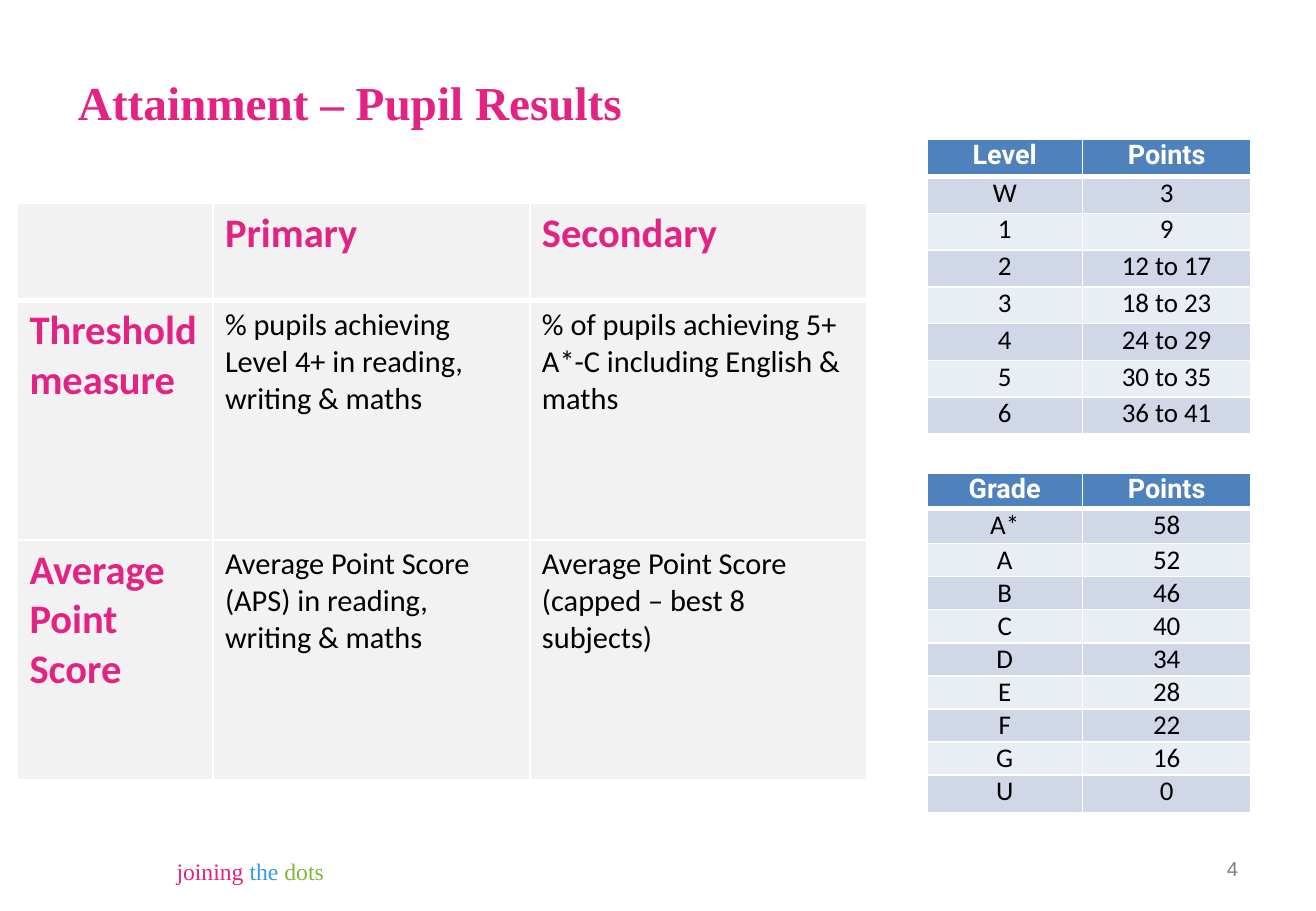
from lxml.etree import SubElement
from pptx import Presentation
from pptx.dml.color import RGBColor as RGB
from pptx.enum.text import MSO_ANCHOR as Anchor, PP_ALIGN as Align
from pptx.oxml.ns import qn
from pptx.util import Pt

TITLE = "Attainment – Pupil Results"
STRAPLINE = [("joining ", "pink"), ("the", "blue"), (" dots", "green")]
PAGE_NUMBER = "4"

MEASURES = [
    ("", "Primary", "Secondary"),
    ("Threshold measure",
     "% pupils achieving Level 4+ in reading, writing & maths",
     "% of pupils achieving 5+ A*-C including English & maths"),
    ("Average Point Score",
     "Average Point Score (APS) in reading, writing & maths",
     "Average Point Score (capped – best 8 subjects)"),
]
LEVELS = [("Level", "Points"), ("W", "3"), ("1", "9"), ("2", "12 to 17"),
          ("3", "18 to 23"), ("4", "24 to 29"), ("5", "30 to 35"), ("6", "36 to 41")]
GRADES = [("Grade", "Points"), ("A*", "58"), ("A", "52"), ("B", "46"), ("C", "40"),
          ("D", "34"), ("E", "28"), ("F", "22"), ("G", "16"), ("U", "0")]

THEME = {
    "colours": {"pink": "E32383", "blue": "339CDF", "green": "7FB731", "grey": "808080",
                "black": "000000", "white": "FFFFFF", "panel": "F2F2F2",
                "header": "4F81BD", "band": "D0D8E8", "pale": "E9EDF4"},
    "title": {"name": "Times New Roman", "size": Pt(28), "bold": True},
    "strapline": {"name": "Times New Roman", "size": Pt(14), "bold": False},
    "number": {"name": "Arial", "size": Pt(12), "bold": False},
    "heading": {"name": "Calibri", "size": Pt(24), "bold": True},
    "measure": {"name": "Calibri", "size": Pt(18), "bold": False},
    "points_header": {"name": "Roboto", "size": Pt(16), "bold": True},
    "points": {"name": "Calibri", "size": Pt(16), "bold": False},
}
RULE, HEADER_RULE = 1, 3
POINTS_LEFT = 549.4
POINTS_COLUMNS = (92.2, 99.8)


def colour(name):
    return RGB.from_string(THEME["colours"][name])


def write(paragraph, text, style, ink):
    run = paragraph.add_run()
    run.text = text
    for attribute, value in THEME[style].items():
        setattr(run.font, attribute, value)
    run.font.color.rgb = colour(ink)


def add_borders(cell, row):
    """White rules all round, heavier between the header and the first row."""
    properties = cell._tc.get_or_add_tcPr()
    weights = {"a:lnL": RULE, "a:lnR": RULE,
               "a:lnT": HEADER_RULE if row == 1 else RULE,
               "a:lnB": HEADER_RULE if row == 0 else RULE}
    for position, (tag, weight) in enumerate(weights.items()):
        line = SubElement(properties, qn(tag), w=str(Pt(weight)))
        fill = SubElement(line, qn("a:solidFill"))
        SubElement(fill, qn("a:srgbClr"), val=THEME["colours"]["white"])
        properties.insert(position, line)


def add_grid(slide, rows, left, top, widths, heights, look):
    """Add a table; look(row, column) gives text style, ink and fill."""
    frame = slide.shapes.add_table(len(rows), len(widths), Pt(left), Pt(top),
                                   Pt(sum(widths)), Pt(sum(heights)))
    table = frame.table
    table.horz_banding = False
    for column, width in zip(table.columns, widths):
        column.width = Pt(width)
    for row, height in zip(table.rows, heights):
        row.height = Pt(height)
    for r, texts in enumerate(rows):
        for c, text in enumerate(texts):
            cell = table.cell(r, c)
            style, ink, fill = look(r, c)
            cell.fill.solid()
            cell.fill.fore_color.rgb = colour(fill)
            add_borders(cell, r)
            if text:
                write(cell.text_frame.paragraphs[0], text, style, ink)
    return table


def measure_look(row, column):
    if row == 0 or column == 0:
        return "heading", "pink", "panel"
    return "measure", "black", "panel"


def points_look(row, column):
    if row == 0:
        return "points_header", "white", "header"
    return "points", "black", "band" if row % 2 else "pale"


def add_points(slide, rows, top, heights):
    table = add_grid(slide, rows, POINTS_LEFT, top, POINTS_COLUMNS, heights, points_look)
    for cell in table.iter_cells():
        cell.margin_left = cell.margin_right = Pt(5)
        cell.margin_top = cell.margin_bottom = 0
        cell.text_frame.paragraphs[0].alignment = Align.CENTER


def add_footer(slide, left, top, width, height, align, runs, style):
    box = slide.shapes.add_textbox(Pt(left), Pt(top), Pt(width), Pt(height))
    frame = box.text_frame
    frame.word_wrap = True
    frame.vertical_anchor = Anchor.MIDDLE
    frame.paragraphs[0].alignment = align
    for text, ink in runs:
        write(frame.paragraphs[0], text, style, ink)


def main():
    deck = Presentation()
    deck.slide_width, deck.slide_height = Pt(780), Pt(540)
    slide = deck.slides.add_slide(deck.slide_layouts[5])

    title = slide.shapes.title
    title.left, title.top, title.width, title.height = Pt(39), Pt(15), Pt(702), Pt(90)
    title.text_frame.vertical_anchor = Anchor.MIDDLE
    heading = title.text_frame.paragraphs[0]
    heading.alignment = Align.LEFT
    write(heading, TITLE, "title", "pink")

    add_footer(slide, 77, 502, 142.6, 28.8, Align.CENTER, STRAPLINE, "strapline")
    add_footer(slide, 558.7, 500.4, 182.2, 28.8, Align.RIGHT,
               [(PAGE_NUMBER, "grey")], "number")

    add_points(slide, GRADES, 280.8, [20.5, 21] + [19.6] * 7 + [22.5])
    add_grid(slide, MEASURES, 10.3, 120.4, (115.9, 187.9, 199.4),
             (57.6, 142, 142), measure_look)
    add_points(slide, LEVELS, 82.8, [21.8] * len(LEVELS))

    deck.save("out.pptx")


if __name__ == "__main__":
    main()
